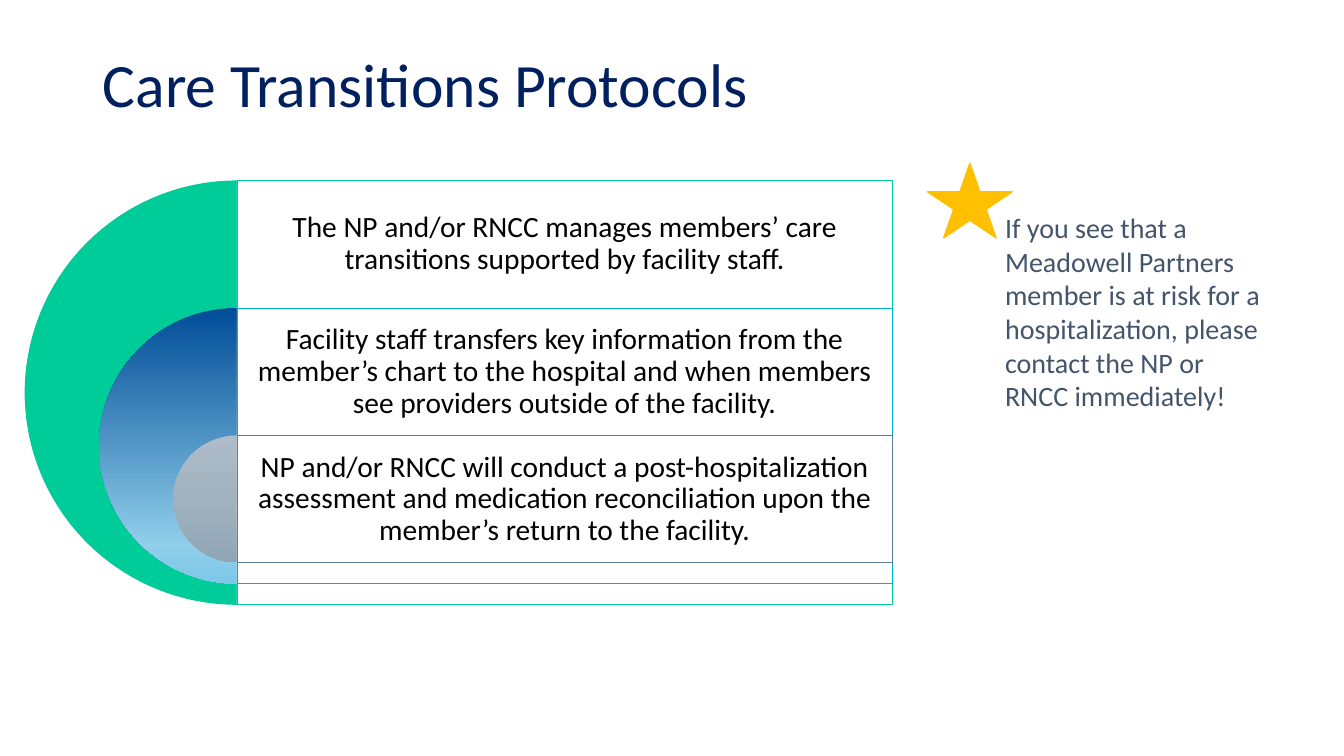
from lxml import etree
from pptx import Presentation
from pptx.dml.color import RGBColor
from pptx.enum.shapes import MSO_SHAPE
from pptx.enum.text import MSO_ANCHOR, PP_ALIGN
from pptx.oxml.ns import qn
from pptx.util import Inches, Pt

PIE, RECT, STAR = MSO_SHAPE.PIE, MSO_SHAPE.RECTANGLE, MSO_SHAPE.STAR_5_POINT
LEFT, CENTER = PP_ALIGN.LEFT, PP_ALIGN.CENTER
TOP, MIDDLE = MSO_ANCHOR.TOP, MSO_ANCHOR.MIDDLE

FONT = "Calibri"
AXIS_X, RINGS_TOP = 2.35, 1.79
OUTER_DIAMETER, DIAMETER_STEP = 4.21, 1.475
PANEL_WIDTH, ROW_HEIGHT = 6.5, 1.265

PROTOCOLS = [
    ("The NP and/or RNCC manages members’ care transitions supported by facility staff.",
     [(0, "00CC99")], "00CC99"),
    ("Facility staff transfers key information from the member’s chart to the hospital "
     "and when members see providers outside of the facility.",
     [(0, "004C97"), (86, "90CEEA"), (100, "7CC8E8")], "00AFD7"),
    ("NP and/or RNCC will conduct a post-hospitalization assessment and medication "
     "reconciliation upon the member’s return to the facility.",
     [(0, "ADBCC8"), (50, "A0B2BE"), (100, "90A6B7")], "5B7F95"),
]
WARNING = ("If you see that a Meadowell Partners member is at risk for a "
           "hospitalization, please contact the NP or RNCC immediately!")


def color(value):
    """Turn a hex string into a colour."""
    return RGBColor.from_string(value)


def apply(target, formats):
    """Set each attribute named in a dict of format values."""
    for attribute, value in formats.items():
        setattr(target, attribute, value)


def paint(shape, stops):
    """Fill a shape with one colour, or a downward gradient of several."""
    if len(stops) == 1:
        shape.fill.solid()
        shape.fill.fore_color.rgb = color(stops[0][1])
        return
    shape.fill.gradient()
    shape.fill.gradient_angle = 270
    stop_list = shape._element.spPr.find(".//" + qn("a:gsLst"))
    for default_stop in list(stop_list):
        stop_list.remove(default_stop)
    for percent, value in stops:
        stop = etree.SubElement(stop_list, qn("a:gs"), pos=str(percent * 1000))
        etree.SubElement(stop, qn("a:srgbClr"), val=value)


def add_figure(slide, preset, box, stops, outline=None, line_width=0.5):
    """Add a preset shape with its fill and optional outline."""
    figure = slide.shapes.add_shape(preset, *map(Inches, box))
    figure.shadow.inherit = False
    paint(figure, stops)
    if outline:
        figure.line.color.rgb = color(outline)
        figure.line.width = Pt(line_width)
    else:
        figure.line.fill.background()
    return figure


def write(frame, text, size, text_color, align=LEFT, anchor=TOP, spacing=1.0):
    """Write one formatted paragraph into a text frame."""
    apply(frame, {"text": text, "word_wrap": True, "vertical_anchor": anchor})
    paragraph = frame.paragraphs[0]
    apply(paragraph, {"alignment": align, "line_spacing": spacing})
    font = paragraph.runs[0].font
    apply(font, {"name": FONT, "size": Pt(size)})
    font.color.rgb = color(text_color)


def add_text(slide, box, text, size, text_color, inset=None, **layout):
    """Add a wrapping text box."""
    frame = slide.shapes.add_textbox(*map(Inches, box)).text_frame
    if inset is not None:
        sides = ("margin_left", "margin_top", "margin_right", "margin_bottom")
        apply(frame, dict.fromkeys(sides, Inches(inset)))
    write(frame, text, size, text_color, **layout)


def add_protocol(slide, index, text, stops, outline):
    """Add one half ring with its panel and statement."""
    diameter = OUTER_DIAMETER - DIAMETER_STEP * index
    top = RINGS_TOP + ROW_HEIGHT * index
    ring = add_figure(slide, PIE, (AXIS_X - diameter / 2, top, diameter, diameter), stops)
    ring.adjustments[0], ring.adjustments[1] = 54, 162
    panel = add_figure(slide, RECT, (AXIS_X, top, PANEL_WIDTH, diameter),
                       [(0, "FFFFFF")], outline)
    panel_color = panel._element.spPr.find(qn("a:solidFill") + "/" + qn("a:srgbClr"))
    etree.SubElement(panel_color, qn("a:alpha"), val="90000")
    add_text(slide, (AXIS_X, top, PANEL_WIDTH, ROW_HEIGHT), text, 21, "000000",
             inset=0.09, align=CENTER, anchor=MIDDLE, spacing=0.9)


def add_title(slide, text):
    """Place and format the slide title."""
    title = slide.shapes.title
    apply(title, {"left": Inches(0.92), "top": Inches(0.4),
                  "width": Inches(11.5), "height": Inches(0.93)})
    write(title.text_frame, text, 44, "002060", anchor=MIDDLE, spacing=0.9)


def main():
    """Build and save the slide."""
    deck = Presentation()
    apply(deck, {"slide_width": Inches(13.33), "slide_height": Inches(7.5)})
    slide = deck.slides.add_slide(deck.slide_layouts[5])
    add_title(slide, "Care Transitions Protocols")
    for index, protocol in enumerate(PROTOCOLS):
        add_protocol(slide, index, *protocol)
    add_figure(slide, STAR, (9.2, 1.62, 0.84, 0.74), [(0, "FFC000")], "FFC000", 1)
    add_text(slide, (9.87, 2.04, 2.8, 2.12), WARNING, 20, "44546A")
    deck.save("out.pptx")


if __name__ == "__main__":
    main()
